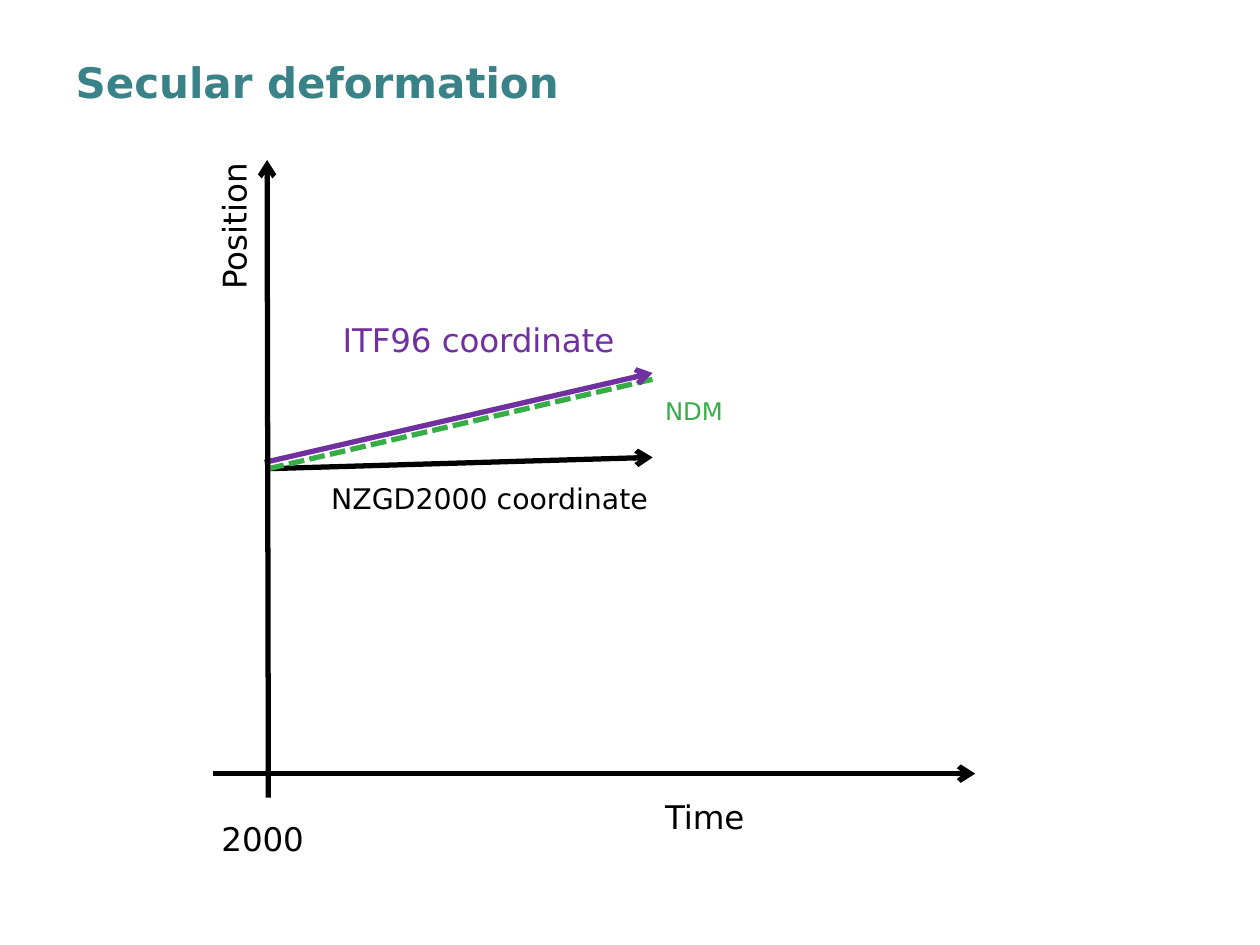
from typing import NamedTuple

from lxml.etree import SubElement
from pptx import Presentation
from pptx.dml.color import RGBColor
from pptx.enum.dml import MSO_LINE
from pptx.enum.shapes import MSO_CONNECTOR, MSO_SHAPE
from pptx.enum.text import MSO_ANCHOR, MSO_AUTO_SIZE, PP_ALIGN
from pptx.oxml.ns import qn
from pptx.util import Inches, Pt

COLORS = {
    "title": "388288",
    "black": "000000",
    "white": "FFFFFF",
    "green": "37AD47",
    "purple": "7030A0",
}
FONT = "DejaVu Sans"
START = (2.13, 3.72)
END = 5.18


class Label(NamedTuple):
    text: str
    box: tuple[float, float, float, float]
    size: int = 32
    color: str = "black"
    turn: int = 0
    grow: bool = False
    panel: bool = False


class Line(NamedTuple):
    start: tuple[float, float]
    end: tuple[float, float]
    color: str = "black"
    dashed: bool = False


LABELS = [
    Label("Position", (0.94, 1.36, 1.53, 0.54), turn=270),
    Label("Time", (END, 6.06, 1.08, 0.54), panel=True),
    Label("2000", (1.66, 6.15, 0.97, 0.46), grow=True),
    Label("NDM", (END, 2.87, 0.73, 0.37), 24, "green", grow=True),
    Label("NZGD2000 coordinate", (2.53, 3.55, 3.4, 0.54), 28),
    Label("ITF96 coordinate", (2.62, 2.19, 2.75, 0.46), 32, "purple", grow=True),
]
LINES = [
    Line((1.69, 6.14), (7.74, 6.14)),
    Line(START, (END, 3.63)),
    Line(START, (END, 3.01), "green", dashed=True),
    Line((2.1, 3.67), (END, 2.96), "purple"),
    Line((2.13, 6.33), (2.12, 1.27)),
]


def rgb(name: str) -> RGBColor:
    return RGBColor.from_string(COLORS[name])


def apply(target, values: dict) -> None:
    """Set each named attribute on the target."""
    for name, value in values.items():
        setattr(target, name, value)


def style(run, size: int, color: str, bold: bool = False) -> None:
    apply(run.font, {"name": FONT, "size": Pt(size), "bold": bold})
    run.font.color.rgb = rgb(color)


def add_title(slide, text: str) -> None:
    title = slide.shapes.title
    apply(title, {"left": Inches(0.5), "top": Inches(0.21),
                  "width": Inches(6.07), "height": Inches(0.87)})
    title.text_frame.vertical_anchor = MSO_ANCHOR.MIDDLE
    par = title.text_frame.paragraphs[0]
    par.alignment = PP_ALIGN.LEFT
    run = par.add_run()
    run.text = text
    style(run, 24, "title", bold=True)


def add_label(slide, label: Label) -> None:
    box = [Inches(v) for v in label.box]
    if label.panel:
        shape = slide.shapes.add_shape(MSO_SHAPE.RECTANGLE, *box)
        shape.shadow.inherit = False
        shape.fill.solid()
        shape.fill.fore_color.rgb = rgb("white")
        shape.line.color.rgb = rgb("white")
        shape.line.width = Pt(2)
    else:
        shape = slide.shapes.add_textbox(*box)
    shape.rotation = label.turn
    frame = shape.text_frame
    apply(frame, {
        "word_wrap": False,
        "vertical_anchor": MSO_ANCHOR.TOP if label.grow else MSO_ANCHOR.MIDDLE,
        "auto_size": (MSO_AUTO_SIZE.SHAPE_TO_FIT_TEXT if label.grow
                      else MSO_AUTO_SIZE.NONE),
    })
    par = frame.paragraphs[0]
    par.alignment = PP_ALIGN.LEFT
    run = par.add_run()
    run.text = label.text
    style(run, label.size, label.color)
    run._r.get_or_add_rPr().set("baseline", "-25000")


def add_line(slide, line: Line) -> None:
    """Draw a dashed line, or a solid one with an arrowhead."""
    ends = [Inches(v) for v in line.start + line.end]
    shape = slide.shapes.add_connector(MSO_CONNECTOR.STRAIGHT, *ends)
    shape.line.color.rgb = rgb(line.color)
    shape.line.width = Pt(3)
    if line.dashed:
        shape.line.dash_style = MSO_LINE.SQUARE_DOT
    else:
        SubElement(shape.line._get_or_add_ln(), qn("a:tailEnd"), type="arrow")
    SubElement(shape._element.spPr, qn("a:effectLst"))


def main() -> None:
    deck = Presentation()
    apply(deck, {"slide_width": Inches(10), "slide_height": Inches(7.5)})
    slide = deck.slides.add_slide(deck.slide_layouts[5])
    add_title(slide, "Secular deformation")
    for label in LABELS:
        add_label(slide, label)
    for line in LINES:
        add_line(slide, line)
    deck.save("out.pptx")


if __name__ == "__main__":
    main()
